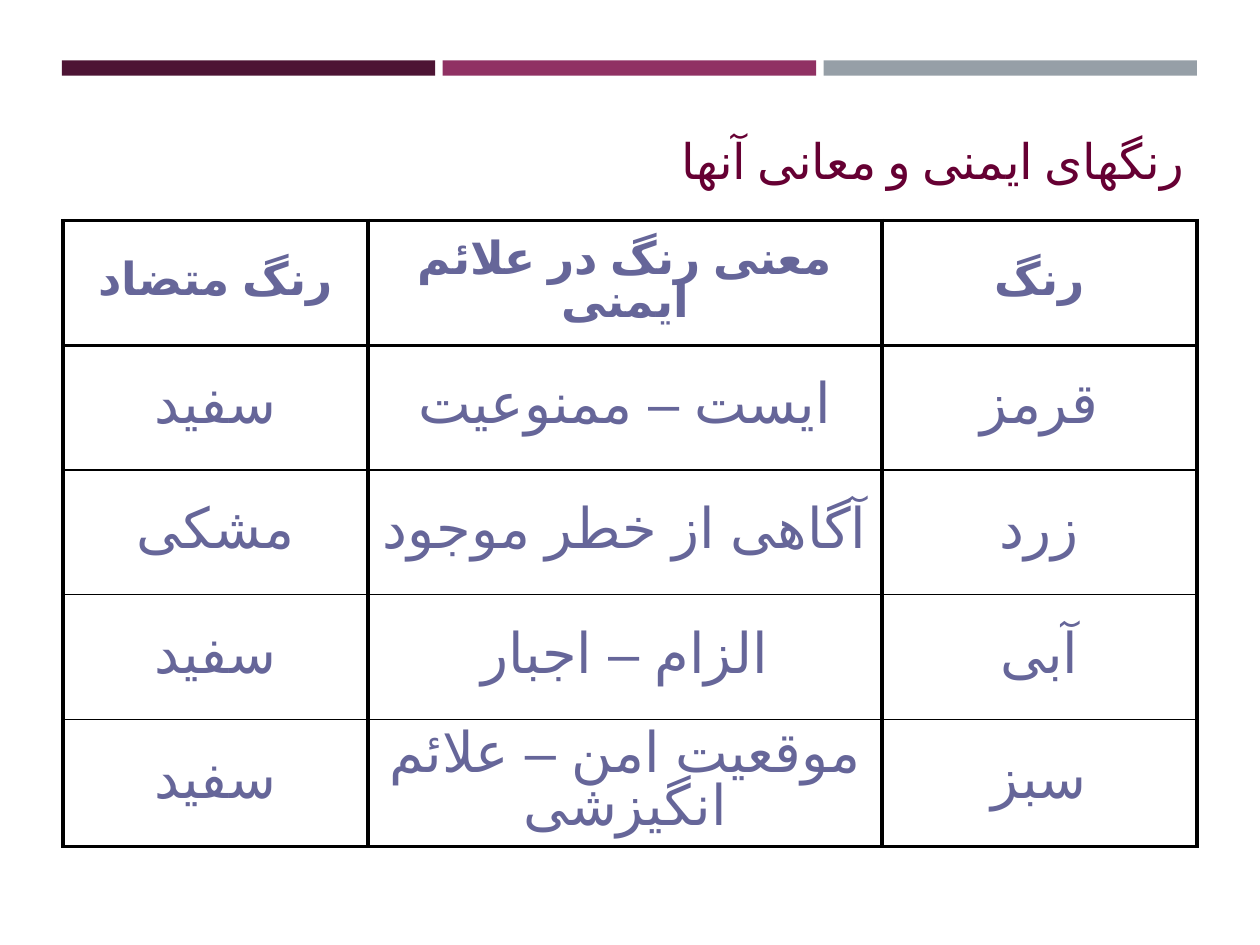
from lxml.etree import SubElement
from pptx import Presentation
from pptx.dml.color import RGBColor
from pptx.enum.lang import MSO_LANGUAGE_ID
from pptx.enum.shapes import MSO_SHAPE
from pptx.enum.text import MSO_ANCHOR, PP_ALIGN
from pptx.oxml.ns import qn
from pptx.util import Inches, Pt

COLORS = {"plum": "4D1434", "rose": "903163", "gray": "969FA7",
          "title": "660033", "text": "666699", "line": "000000"}
ROWS = [
    ("رنگ متضاد", "معنی رنگ در علائم ایمنی", "رنگ"),
    ("سفید", "ایست – ممنوعیت", "قرمز"),
    ("مشکی", "آگاهی از خطر موجود", "زرد"),
    ("سفید", "الزام – اجبار", "آبی"),
    ("سفید", "موقعیت امن – علائم انگیزشی", "سبز"),
]
WIDTHS = (2.42, 4.08, 2.5)
THICK, THIN = 2.25, 1


def style(frame, text, font, size, color, align, bold=False):
    """Write one right-to-left paragraph and format its run."""
    frame.text = text
    para = frame.paragraphs[0]
    para.alignment = align
    para._p.get_or_add_pPr().set("rtl", "1")
    run = para.runs[0]
    run.font.name, run.font.size, run.font.bold = font, Pt(size), bold
    run.font.language_id = MSO_LANGUAGE_ID.FARSI
    run.font.color.rgb = RGBColor.from_string(COLORS[color])
    SubElement(run._r.get_or_add_rPr(), qn("a:cs"), typeface=font)
    return para


def edge(cell, side, width):
    """Draw one border of a table cell."""
    line = SubElement(cell._tc.get_or_add_tcPr(), qn(f"a:ln{side}"), w=str(Pt(width)))
    fill = SubElement(line, qn("a:solidFill"))
    SubElement(fill, qn("a:srgbClr"), val=COLORS["line"])


def add_bars(slide, left, top, width, height, gap=0.06):
    """Place three equal colour bars across the box."""
    names = ("plum", "rose", "gray")
    size = (width - gap * (len(names) - 1)) / len(names)
    for i, name in enumerate(names):
        bar = slide.shapes.add_shape(
            MSO_SHAPE.RECTANGLE, Inches(left + i * (size + gap)), Inches(top),
            Inches(size), Inches(height))
        bar.shadow.inherit = False
        bar.fill.solid()
        bar.fill.fore_color.rgb = RGBColor.from_string(COLORS[name])
        bar.line.fill.background()


def add_title(slide, left, top, width, height):
    """Place the title at the foot of the box."""
    box = slide.shapes.add_textbox(
        Inches(left), Inches(top), Inches(width), Inches(height))
    frame = box.text_frame
    frame.word_wrap = True
    frame.vertical_anchor = MSO_ANCHOR.BOTTOM
    style(frame, "رنگهای ایمنی و معانی آنها", "Cabin", 28, "title", PP_ALIGN.JUSTIFY)


def add_grid(slide, left, top, width, height):
    """Place the table of safety colours in the box."""
    table = slide.shapes.add_table(
        len(ROWS), len(WIDTHS), Inches(left), Inches(top),
        Inches(width), Inches(height)).table
    table.first_row = table.horz_banding = False
    for col, size in zip(table.columns, WIDTHS):
        col.width = Inches(size)
    last = len(ROWS) - 1
    for r, words in enumerate(ROWS):
        head = r == 0
        for c, text in enumerate(words):
            cell = table.cell(r, c)
            cell.vertical_anchor = MSO_ANCHOR.MIDDLE
            para = style(cell.text_frame, text, "Arial", 26 if head else 32,
                         "text", PP_ALIGN.CENTER, head)
            para.line_spacing = 0.85
            edge(cell, "L", THICK)
            edge(cell, "R", THICK)
            edge(cell, "T", THICK if r <= 1 else THIN)
            edge(cell, "B", THICK if r in (0, last) else THIN)
            cell.fill.background()


def main():
    """Build the slide and save it."""
    deck = Presentation()
    deck.slide_width, deck.slide_height = Inches(10), Inches(7.5)
    slide = deck.slides.add_slide(deck.slide_layouts[6])
    add_bars(slide, 0.49, 0.48, 9.01, 0.12)
    add_title(slide, 0.5, 0.3, 9, 1.25)
    add_grid(slide, 0.5, 1.75, 9, 4.95)
    deck.save("out.pptx")


if __name__ == "__main__":
    main()
